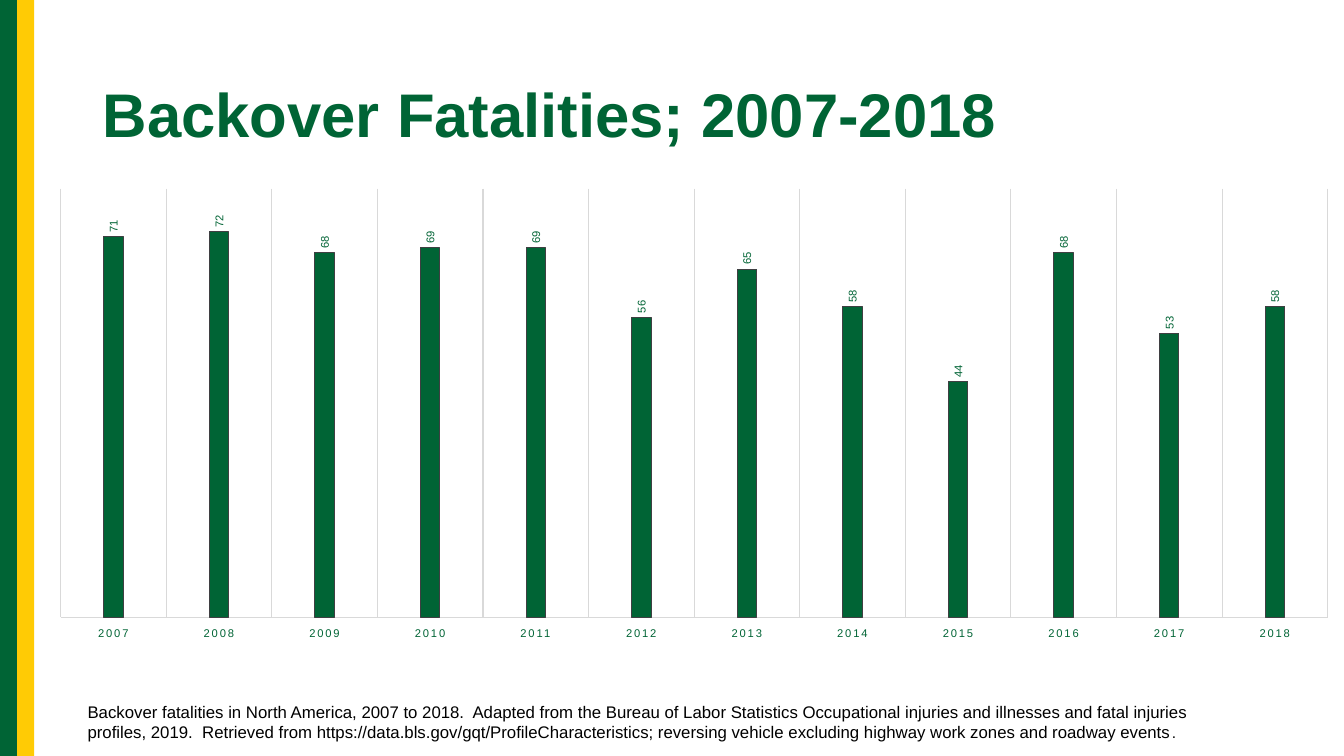
from lxml.etree import SubElement
from pptx import Presentation
from pptx.chart.data import CategoryChartData
from pptx.dml.color import RGBColor
from pptx.enum.chart import XL_CHART_TYPE, XL_LABEL_POSITION, XL_TICK_LABEL_POSITION, XL_TICK_MARK
from pptx.enum.shapes import MSO_SHAPE
from pptx.enum.text import MSO_ANCHOR
from pptx.oxml.ns import qn
from pptx.util import Inches, Pt

GREEN = RGBColor(0x00, 0x64, 0x35)
YELLOW = RGBColor(0xFF, 0xCB, 0x05)
BLACK = RGBColor(0, 0, 0)
GRID_GRAY = RGBColor(0xD9, 0xD9, 0xD9)
OUTLINE_GRAY = RGBColor(0x3F, 0x3F, 0x42)
FONT_NAME = "Arial"

FIRST_YEAR = 2007
FATALITIES = [71, 72, 68, 69, 69, 56, 65, 58, 44, 68, 53, 58]
SOURCE_NOTE = (
    "Backover fatalities in North America, 2007 to 2018.  Adapted from the Bureau of Labor "
    "Statistics Occupational injuries and illnesses and fatal injuries profiles, 2019.  "
    "Retrieved from https://data.bls.gov/gqt/ProfileCharacteristics; reversing vehicle "
    "excluding highway work zones and roadway events"
)


def set_font(font, size, color, bold=False):
    font.name = FONT_NAME
    font.size = Pt(size)
    font.bold = bold
    font.color.rgb = color


def set_line(line, color):
    line.color.rgb = color
    line.width = Pt(0.75)


def add_text(slide, box, runs, color=BLACK, bold=False, anchor=MSO_ANCHOR.TOP, line_spacing=None):
    """Add one paragraph made of (text, size) runs."""
    frame = slide.shapes.add_textbox(*map(Inches, box)).text_frame
    frame.word_wrap = True
    frame.vertical_anchor = anchor
    paragraph = frame.paragraphs[0]
    paragraph.line_spacing = line_spacing
    for text, size in runs:
        run = paragraph.add_run()
        run.text = text
        set_font(run.font, size, color, bold)


def add_side_stripes(slide, left, top, width, height):
    """Draw the green stripe, then the yellow one over its right edge."""
    half = width / 2
    for color, offset, stripe_width in ((GREEN, 0, half + 0.04), (YELLOW, half, half)):
        stripe = slide.shapes.add_shape(
            MSO_SHAPE.RECTANGLE, *map(Inches, (left + offset, top, stripe_width, height)))
        stripe.shadow.inherit = False
        stripe.fill.solid()
        stripe.fill.fore_color.rgb = color
        stripe.line.fill.background()


def set_plot_layout(chart, **fractions):
    """Fix the inner plot area as fractions of the chart."""
    plot_area = chart.element.find(".//" + qn("c:plotArea"))
    for old_layout in plot_area.findall(qn("c:layout")):
        plot_area.remove(old_layout)
    layout = SubElement(plot_area, qn("c:layout"))
    plot_area.insert(0, layout)
    manual = SubElement(layout, qn("c:manualLayout"))
    settings = {"layoutTarget": "inner", "xMode": "edge", "yMode": "edge", **fractions}
    for name, value in settings.items():
        SubElement(manual, qn("c:" + name)).set("val", str(value))


def set_letter_spacing(text_owner, spacing):
    text_owner.find(".//" + qn("a:defRPr")).set("spc", str(spacing))


def add_fatality_chart(slide, box):
    data = CategoryChartData()
    data.categories = [str(FIRST_YEAR + index) for index in range(len(FATALITIES))]
    data.add_series("Series 1", FATALITIES)
    chart = slide.shapes.add_chart(
        XL_CHART_TYPE.COLUMN_CLUSTERED, *map(Inches, box), data).chart
    chart.has_legend = False
    chart.has_title = False
    set_font(chart.font, 10, BLACK)
    set_plot_layout(chart, x=0.02, y=0.02, w=0.96, h=0.92)

    years = chart.category_axis
    years.major_tick_mark = XL_TICK_MARK.NONE
    years.tick_label_position = XL_TICK_LABEL_POSITION.LOW
    years.has_major_gridlines = True
    set_line(years.major_gridlines.format.line, GRID_GRAY)
    set_line(years.format.line, GRID_GRAY)
    set_font(years.tick_labels.font, 8, GREEN)
    set_letter_spacing(chart.element.find(".//" + qn("c:catAx")), 120)

    counts = chart.value_axis
    counts.minimum_scale = 0
    counts.maximum_scale = 80
    counts.has_major_gridlines = False
    counts.visible = False

    plot = chart.plots[0]
    plot.vary_by_categories = False
    plot.gap_width = 444
    plot.overlap = -90
    series = plot.series[0]
    series.format.fill.solid()
    series.format.fill.fore_color.rgb = GREEN
    set_line(series.format.line, OUTLINE_GRAY)
    labels = series.data_labels
    labels.show_value = True
    labels.position = XL_LABEL_POSITION.OUTSIDE_END
    set_font(labels.font, 8, GREEN)
    label_element = chart.element.find(".//" + qn("c:dLbls"))
    body = label_element.find(".//" + qn("a:bodyPr"))
    body.set("rot", "-5400000")
    body.set("vert", "horz")


def build_chart_slide(presentation):
    slide = presentation.slides.add_slide(presentation.slide_layouts[6])
    add_side_stripes(slide, 0, 0, 0.34, 7.5)
    add_text(slide, (0.92, 0.44, 11.5, 1.45), [("Backover Fatalities; 2007-2018", 44)],
             color=GREEN, bold=True, anchor=MSO_ANCHOR.MIDDLE, line_spacing=0.9)
    add_fatality_chart(slide, (0.34, 1.78, 13.09, 4.62))
    add_text(slide, (0.77, 6.91, 11.46, 0.5), [(SOURCE_NOTE, 12), (".", 11)])


def main():
    presentation = Presentation()
    presentation.slide_width = Inches(13.33)
    presentation.slide_height = Inches(7.5)
    build_chart_slide(presentation)
    presentation.save("out.pptx")


if __name__ == "__main__":
    main()
